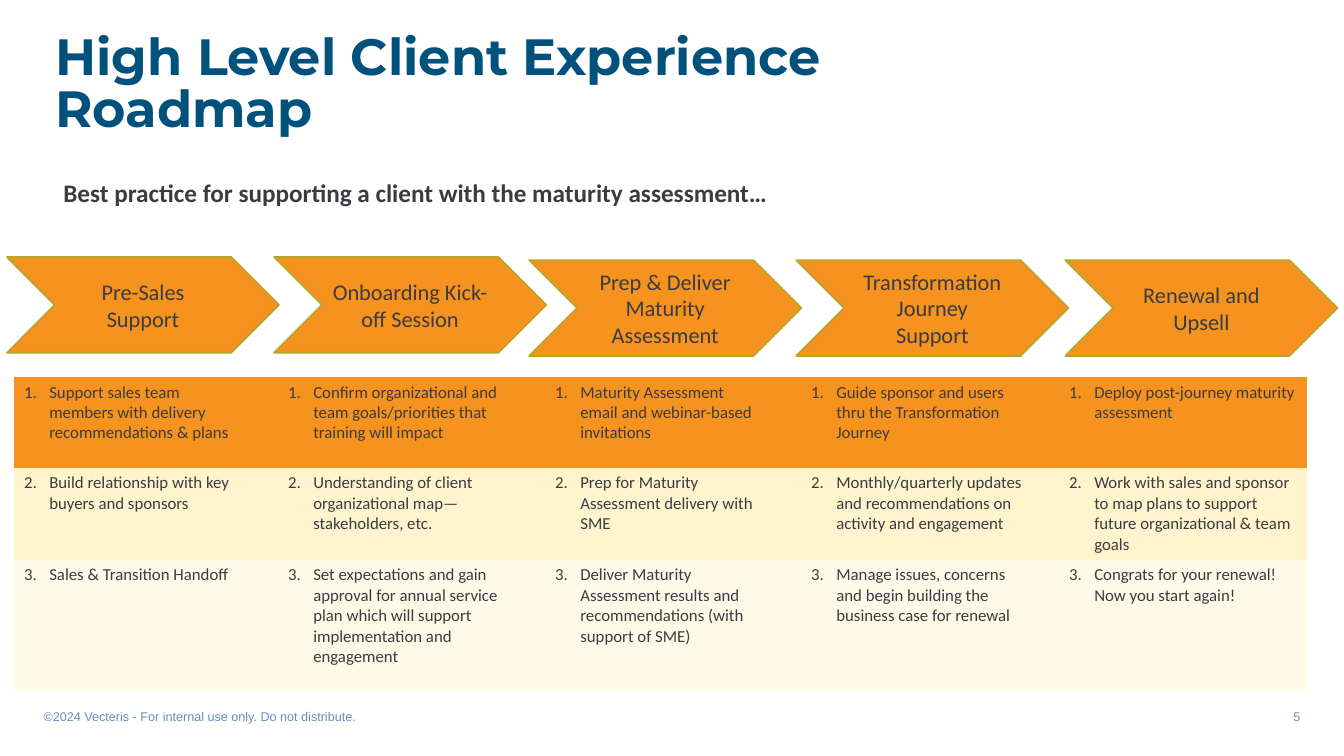
import pptx
import pptx.util
import pptx.dml.color
import pptx.enum.shapes
import pptx.enum.text
import pptx.oxml.ns
import lxml.etree

Pt = pptx.util.Pt
ALIGN = pptx.enum.text.PP_ALIGN
ANCHOR = pptx.enum.text.MSO_ANCHOR

COLORS = {
    "title": "00517C", "text": "3A3C41", "footer": "668EB9",
    "orange": "F6921E", "olive": "BAA42A",
    "cream": "FFF4CD", "pale": "FFF9E7",
}
NO_STYLE = "{2D5ABB26-0587-4C30-8999-92F81FD0307C}"

# Each stage: heading lines, then its numbered steps
STAGES = [
    (["Pre-Sales", "Support"],
     ["Support sales team members with delivery recommendations & plans",
      "Build relationship with key buyers and sponsors",
      "Sales & Transition Handoff"]),
    (["Onboarding Kick-off Session"],
     ["Confirm organizational and team goals/priorities that training will impact",
      "Understanding of client organizational map—stakeholders, etc.",
      "Set expectations and gain approval for annual service plan which will "
      "support implementation and engagement"]),
    (["Prep & Deliver", "Maturity Assessment"],
     ["Maturity Assessment email and webinar-based invitations",
      "Prep for Maturity Assessment delivery with SME",
      "Deliver Maturity Assessment results and recommendations (with support of SME)"]),
    (["Transformation Journey", "Support"],
     ["Guide sponsor and users thru the Transformation Journey",
      "Monthly/quarterly updates and recommendations on activity and engagement",
      "Manage issues, concerns and begin building the business case for renewal"]),
    (["Renewal and Upsell"],
     ["Deploy post-journey maturity assessment",
      "Work with sales and sponsor to map plans to support future "
      "organizational & team goals",
      "Congrats for your renewal! Now you start again!"]),
]
CHEVRON_OFFSETS = [(0, 0), (190.8, 0), (373, 2.2), (563.8, 2.2), (756, 2.2)]
COLUMN_WIDTHS = [169.9, 18.7, 170.6, 20.2, 162.7, 20.2, 167, 16.6, 177.1]
ROWS = [(65, "orange"), (65.5, "cream"), (93, "pale")]


def rgb(name):
    return pptx.dml.color.RGBColor.from_string(COLORS[name])


def add_run(p, text, size, color, font="Calibri", bold=False):
    r = p.add_run()
    r.text = text
    r.font.size = Pt(size)
    r.font.name = font
    r.font.bold = bold
    r.font.color.rgb = rgb(color)


def add_text(slide, box, text, size, color, font="Calibri", bold=False,
             align=ALIGN.LEFT):
    tf = slide.shapes.add_textbox(*map(Pt, box)).text_frame
    tf.word_wrap = True
    p = tf.paragraphs[0]
    p.alignment = align
    add_run(p, text, size, color, font, bold)


def number_paragraph(p, start):
    pPr = p._p.get_or_add_pPr()
    pPr.set("marL", str(Pt(18)))
    pPr.set("indent", str(-Pt(18)))
    qn = pptx.oxml.ns.qn
    clr = lxml.etree.SubElement(pPr, qn("a:buClr"))
    lxml.etree.SubElement(clr, qn("a:srgbClr"), val=COLORS["text"])
    lxml.etree.SubElement(pPr, qn("a:buAutoNum"), type="arabicPeriod",
                          startAt=str(start))


def add_footer(slide, left, top, width):
    # Rule, copyright line and page number
    line = slide.shapes.add_connector(
        pptx.enum.shapes.MSO_CONNECTOR.STRAIGHT,
        Pt(left + 7.7), Pt(top), Pt(left + width - 8), Pt(top))
    line.line.color.rgb = rgb("footer")
    line.line.width = Pt(1)
    lxml.etree.SubElement(line._element.spPr, pptx.oxml.ns.qn("a:effectLst"))
    part = 384
    add_text(slide, (left, top + 10, part, 18),
             "©2024 Vecteris - For internal use only. Do not distribute.",
             9, "footer", "Arial")
    add_text(slide, (left + width - part, top + 10, part, 18),
             "5", 9, "footer", "Arial", align=ALIGN.RIGHT)


def add_heading(slide, left, top, width):
    # Title and subtitle
    title = slide.shapes.title
    title.left, title.top = Pt(left), Pt(top)
    title.width, title.height = Pt(width), Pt(54.7)
    tf = title.text_frame
    tf.word_wrap = True
    tf.auto_size = pptx.enum.text.MSO_AUTO_SIZE.NONE
    tf.vertical_anchor = ANCHOR.BOTTOM
    p = tf.paragraphs[0]
    p.alignment = ALIGN.LEFT
    p.line_spacing = 0.85
    add_run(p, "High Level Client Experience Roadmap", 36.4, "title",
            "Montserrat", True)
    add_text(slide, (left + 5.8, top + 75.6, 775.4, 29),
             "Best practice for supporting a client with the maturity assessment…",
             18, "text", bold=True)


def add_step_table(slide, left, top):
    # Steps fill every second column; the others are gaps
    frame = slide.shapes.add_table(
        len(ROWS), len(COLUMN_WIDTHS), Pt(left), Pt(top),
        Pt(sum(COLUMN_WIDTHS)), Pt(sum(height for height, _ in ROWS)))
    table = frame.table
    table.first_row = table.horz_banding = False
    table._tbl.tblPr.find(pptx.oxml.ns.qn("a:tableStyleId")).text = NO_STYLE
    for col, width in zip(table.columns, COLUMN_WIDTHS):
        col.width = Pt(width)
    for i, (height, fill) in enumerate(ROWS):
        table.rows[i].height = Pt(height)
        for j, cell in enumerate(table.rows[i].cells):
            cell.fill.solid()
            cell.fill.fore_color.rgb = rgb(fill)
            if j % 2 == 0:
                p = cell.text_frame.paragraphs[0]
                number_paragraph(p, i + 1)
                add_run(p, STAGES[j // 2][1][i], 12, "text")


def add_chevrons(slide, left, top):
    # One chevron for each stage
    for (lines, _), (dx, dy) in zip(STAGES, CHEVRON_OFFSETS):
        sp = slide.shapes.add_shape(
            pptx.enum.shapes.MSO_SHAPE.CHEVRON,
            Pt(left + dx), Pt(top + dy), Pt(194.4), Pt(68.4))
        sp.shadow.inherit = False
        sp.fill.solid()
        sp.fill.fore_color.rgb = rgb("orange")
        sp.line.color.rgb = rgb("olive")
        sp.line.width = Pt(1.25)
        tf = sp.text_frame
        tf.word_wrap = True
        tf.vertical_anchor = ANCHOR.MIDDLE
        for i, text in enumerate(lines):
            p = tf.add_paragraph() if i else tf.paragraphs[0]
            p.alignment = ALIGN.CENTER
            add_run(p, text, 16, "text")


def main():
    prs = pptx.Presentation()
    prs.slide_width, prs.slide_height = Pt(960), Pt(540)
    slide = prs.slides.add_slide(prs.slide_layouts.get_by_name("Title Only"))
    add_footer(slide, 24, 492.5, 912)
    add_heading(slide, 32.4, 47.5, 731.5)
    add_step_table(slide, 10, 269.3)
    add_chevrons(slide, 5, 183.6)
    prs.save("out.pptx")


if __name__ == "__main__":
    main()
